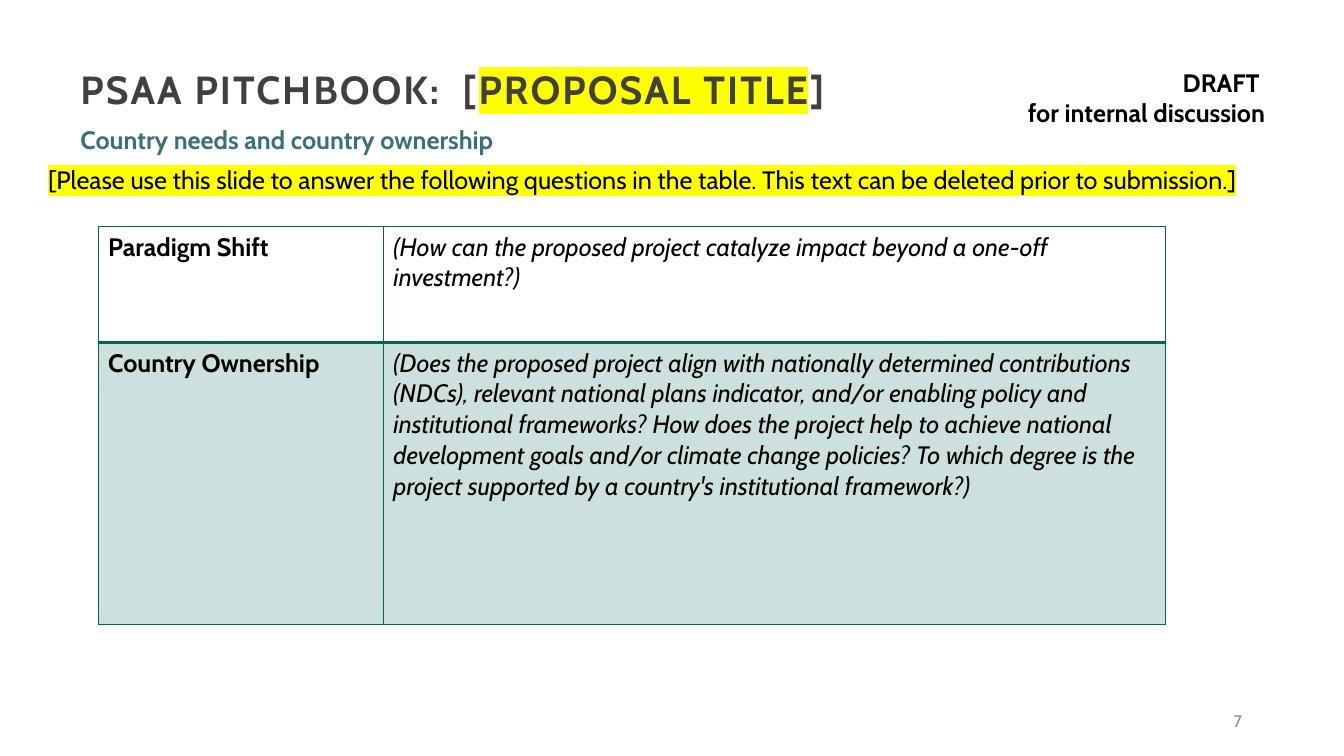
from typing import NamedTuple

from lxml import etree
from pptx import Presentation
from pptx.dml.color import RGBColor
from pptx.enum.text import MSO_ANCHOR, PP_ALIGN
from pptx.oxml.ns import qn
from pptx.util import Inches, Pt

LEFT, RIGHT = PP_ALIGN.LEFT, PP_ALIGN.RIGHT
TOP, MIDDLE = MSO_ANCHOR.TOP, MSO_ANCHOR.MIDDLE

WIDE, HIGH = Inches(13.333), Inches(7.5)
FACE = "Cabin"
BLACK, WHITE, DARK, GREY = "000000", "FFFFFF", "404040", "8C8C8C"
TEAL, GREEN, YELLOW = "3A7179", "006558", "FFFF00"


class Run(NamedTuple):
    text: str
    size: float = 18
    color: str = BLACK
    bold: bool = False
    slant: bool = False
    mark: str = ""
    track: float = 0


class Box(NamedTuple):
    """Place in percent of the slide, then one list of runs per paragraph."""
    left: float
    top: float
    width: float
    height: float
    lines: list[list[Run]]
    align: PP_ALIGN = LEFT
    anchor: MSO_ANCHOR = TOP
    fill: str = ""
    lead: float = 1


class Row(NamedTuple):
    height: float
    name: str
    ask: str
    tint: int
    edges: dict[str, float]


def hue(code: str) -> RGBColor:
    return RGBColor.from_string(code)


def across(share: float) -> int:
    return round(WIDE * share / 100)


def down(share: float) -> int:
    return round(HIGH * share / 100)


def add_run(para, item: Run) -> None:
    run = para.add_run()
    run.text = item.text
    font = run.font
    font.name, font.size = FACE, Pt(item.size)
    font.bold, font.italic = item.bold, item.slant
    font.color.rgb = hue(item.color)
    props = run._r.get_or_add_rPr()
    if item.track:
        props.set("spc", str(round(item.track * 100)))
    if item.mark:
        mark = etree.Element(qn("a:highlight"))
        etree.SubElement(mark, qn("a:srgbClr"), val=item.mark)
        props.find(qn("a:solidFill")).addnext(mark)


def add_box(slide, box: Box) -> None:
    shape = slide.shapes.add_textbox(across(box.left), down(box.top),
                                     across(box.width), down(box.height))
    if box.fill:
        shape.fill.solid()
        shape.fill.fore_color.rgb = hue(box.fill)
    frame = shape.text_frame
    frame.word_wrap = True
    frame.vertical_anchor = box.anchor
    for i, line in enumerate(box.lines):
        para = frame.add_paragraph() if i else frame.paragraphs[0]
        para.alignment = box.align
        if box.lead != 1:
            para.line_spacing = box.lead
        for item in line:
            add_run(para, item)


def add_edge(cell, side: str, width: float, spot: int) -> None:
    line = etree.Element(qn(f"a:ln{side}"), w=str(Pt(width)))
    fill = etree.SubElement(line, qn("a:solidFill"))
    etree.SubElement(fill, qn("a:srgbClr"), val=GREEN)
    cell._tc.get_or_add_tcPr().insert(spot, line)


def fill_cell(cell, item: Run, row: Row) -> None:
    add_run(cell.text_frame.paragraphs[0], item)
    if row.tint:
        cell.fill.solid()
        cell.fill.fore_color.rgb = hue(GREEN)
        color = cell._tc.tcPr.find(f".//{qn('a:srgbClr')}")
        etree.SubElement(color, qn("a:alpha"), val=str(row.tint * 1000))
    else:
        cell.fill.background()
    for spot, (side, width) in enumerate(row.edges.items()):
        add_edge(cell, side, width, spot)


def add_grid(slide, left: float, top: float, cols: list[float],
             rows: list[Row]) -> None:
    table = slide.shapes.add_table(
        len(rows), len(cols), across(left), down(top), across(sum(cols)),
        down(sum(row.height for row in rows))).table
    table.first_row = table.horz_banding = False
    for col, width in zip(table.columns, cols):
        col.width = across(width)
    for line, row in zip(table.rows, rows):
        line.height = down(row.height)
        fill_cell(line.cells[0], Run(row.name, bold=True), row)
        fill_cell(line.cells[1], Run(row.ask, slant=True), row)


# Wording and layout
TITLE = Run("PSAA PITCHBOOK:  [", 28, DARK, bold=True, track=1.5)
BOXES = [
    Box(43.73, 8.27, 51.15, 9.47, [[Run("DRAFT ", bold=True)],
        [Run("for internal discussion", bold=True)]], RIGHT),
    Box(70.65, 92.67, 22.5, 5.33, [[Run("7", 12, GREY)]], RIGHT, MIDDLE),
    Box(5.25, 8.67, 75.75, 8.13, [[
        TITLE,
        TITLE._replace(text="PROPOSAL TITLE", mark=YELLOW),
        TITLE._replace(text="]")]], lead=0.9),
    Box(5.25, 15.73, 44.78, 5.33, [[
        Run("Country needs and country ownership", color=TEAL, bold=True)]],
        fill=WHITE),
    Box(2.85, 21.07, 94.28, 5.33, [[
        Run("[Please use this slide to answer the following questions in the "
            "table. This text can be deleted prior to submission.]",
            mark=YELLOW)]]),
]
ROWS = [
    Row(15.33, "Paradigm Shift",
        "(How can the proposed project catalyze impact beyond a one-off "
        "investment?)", 0, {"L": 1, "R": 1, "T": 1, "B": 2}),
    Row(37.33, "Country Ownership",
        "(Does the proposed project align with nationally determined "
        "contributions (NDCs), relevant national plans indicator, and/or "
        "enabling policy and institutional frameworks? How does the project "
        "help to achieve national development goals and/or climate change "
        "policies? To which degree is the project supported by a country's "
        "institutional framework?)", 20, {"L": 1, "R": 1, "T": 2, "B": 1}),
]


def main() -> None:
    deck = Presentation()
    deck.slide_width, deck.slide_height = WIDE, HIGH
    slide = deck.slides.add_slide(deck.slide_layouts[6])

    # Headings, number and hint
    for box in BOXES:
        add_box(slide, box)

    # Question table
    add_grid(slide, 7.3, 30, [21.23, 58.2], ROWS)
    deck.save("out.pptx")


if __name__ == "__main__":
    main()
